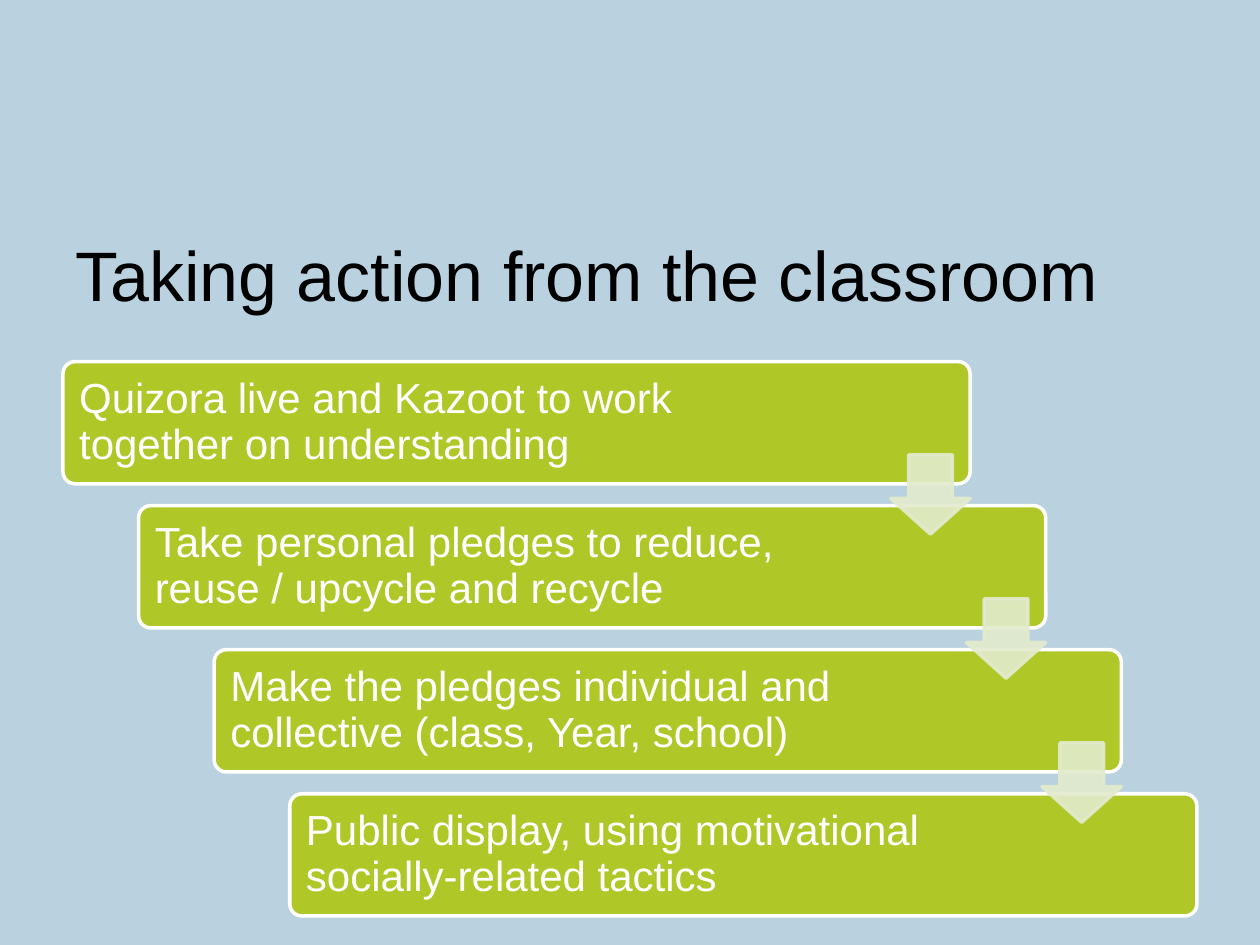
from lxml.etree import SubElement
from pptx import Presentation
from pptx.dml.color import RGBColor
from pptx.enum.shapes import MSO_SHAPE
from pptx.enum.text import MSO_ANCHOR, PP_ALIGN
from pptx.oxml.ns import qn
from pptx.util import Inches, Pt

SKY = RGBColor(0xBA, 0xD2, 0xE0)
LIME = RGBColor(0xAF, 0xC8, 0x28)
PALE_LIME = RGBColor(0xE3, 0xEB, 0xCD)
WHITE = RGBColor(0xFF, 0xFF, 0xFF)
BLACK = RGBColor(0x00, 0x00, 0x00)

FIRST_LEFT, FIRST_TOP = 0.5, 2.87
STEP_RIGHT, STEP_DOWN = 0.6, 3.43 / 3
STEPS = [
    ("Quizora live and Kazoot to work together on understanding", 6.07),
    ("Take personal pledges to reduce, reuse / upcycle and recycle", 5.91),
    ("Make the pledges individual and collective (class, Year, school)", 5.92),
    ("Public display, using motivational socially-related tactics", 5.91),
]


def write_text(frame, text, size=24, color=WHITE, line_spacing=None):
    paragraph = frame.paragraphs[0]
    paragraph.alignment = PP_ALIGN.LEFT
    if line_spacing:
        paragraph.line_spacing = line_spacing
    run = paragraph.add_run()
    run.text = text
    run.font.name = "Arial"
    run.font.size = Pt(size)
    run.font.color.rgb = color


class StaircaseSlide:
    def __init__(self, presentation):
        self.slide = presentation.slides.add_slide(presentation.slide_layouts[6])
        background = self.slide.background.fill
        background.solid()
        background.fore_color.rgb = SKY

    def text(self, left, top, width, height, text, insets=(0.1, 0.1), **style):
        box = self.slide.shapes.add_textbox(
            Inches(left), Inches(top), Inches(width), Inches(height))
        frame = box.text_frame
        frame.word_wrap = True
        frame.vertical_anchor = MSO_ANCHOR.MIDDLE
        frame.margin_left = frame.margin_right = Inches(0.1)
        frame.margin_top, frame.margin_bottom = map(Inches, insets)
        write_text(frame, text, **style)

    def block(self, kind, left, top, width, height, adjustments, fill, line):
        block = self.slide.shapes.add_shape(
            kind, Inches(left), Inches(top), Inches(width), Inches(height))
        block.shadow.inherit = False
        for index, value in enumerate(adjustments):
            block.adjustments[index] = value
        block.fill.solid()
        block.fill.fore_color.rgb = fill
        block.line.color.rgb = line
        block.line.width = Pt(2)
        return block

    def step(self, left, top, text, text_width):
        self.block(MSO_SHAPE.ROUNDED_RECTANGLE, left, top, 7.2, 0.97,
                   [0.1], LIME, WHITE)
        self.text(left + 0.03, top + 0.03, text_width, 0.91, text,
                  line_spacing=0.9)

    def arrow(self, left, top):
        arrow = self.block(MSO_SHAPE.DOWN_ARROW, left, top, 0.63, 0.63,
                           [0.55, 0.45], PALE_LIME, PALE_LIME)
        for color in arrow.element.spPr.iter(qn("a:srgbClr")):
            SubElement(color, qn("a:alpha"), val="90000")


def main():
    presentation = Presentation()
    presentation.slide_width = Inches(10)
    presentation.slide_height = Inches(7.5)
    staircase = StaircaseSlide(presentation)
    staircase.text(0.5, 1.74, 9, 0.98, "Taking action from the classroom",
                   insets=(0.05, 0.17), size=40, color=BLACK)
    corners = [(FIRST_LEFT + STEP_RIGHT * i, FIRST_TOP + STEP_DOWN * i)
               for i in range(len(STEPS))]
    for (left, top), (text, text_width) in zip(corners, STEPS):
        staircase.step(left, top, text, text_width)
    for left, top in corners[:-1]:
        staircase.arrow(left + 6.57, top + 0.74)
    presentation.save("out.pptx")


if __name__ == "__main__":
    main()
